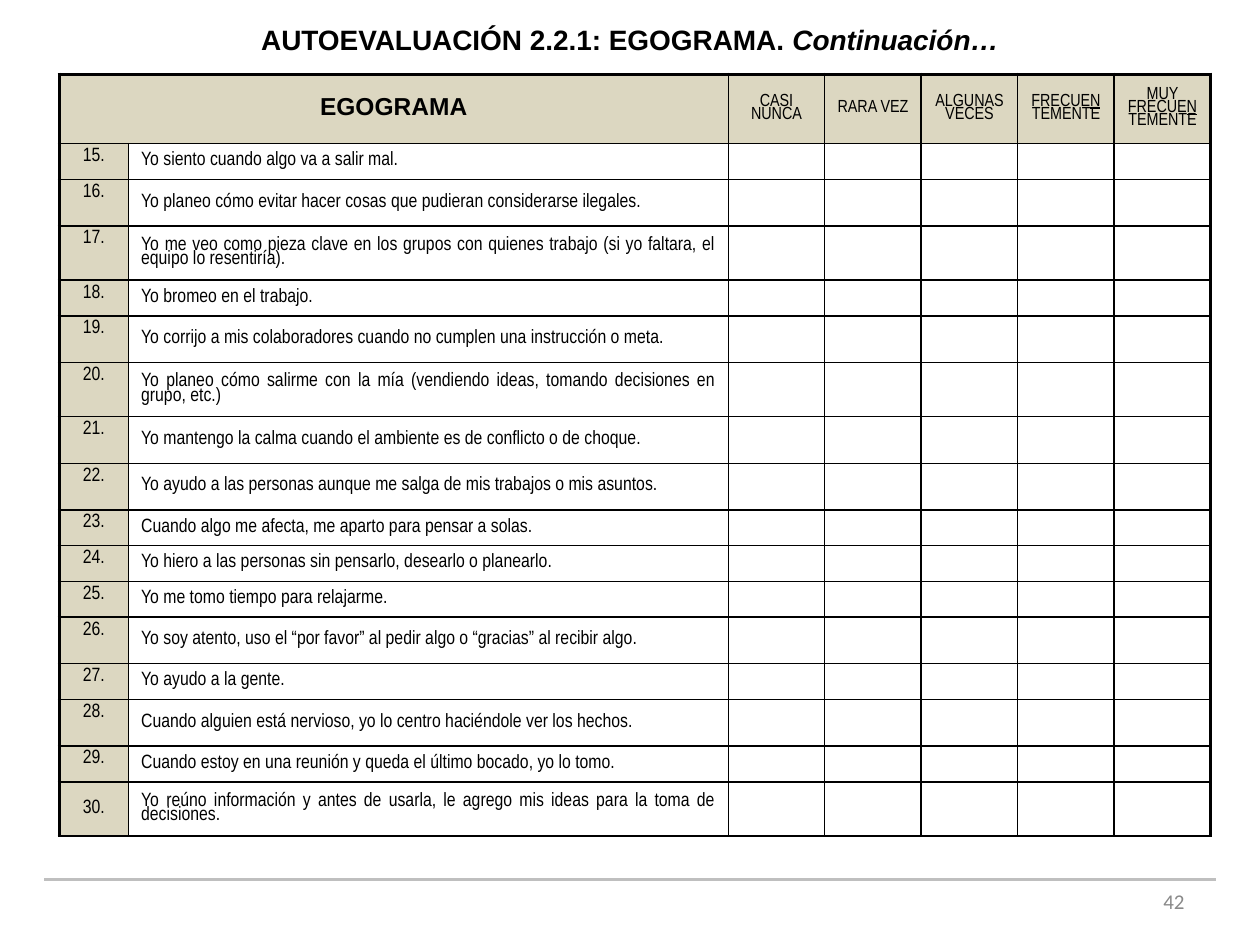
"""Build the second page of the egogram self-assessment questionnaire."""
from dataclasses import dataclass

from lxml import etree
from pptx import Presentation
from pptx.dml.color import RGBColor
from pptx.enum.shapes import MSO_CONNECTOR
from pptx.enum.text import MSO_ANCHOR, PP_ALIGN
from pptx.oxml.ns import qn
from pptx.util import Inches, Pt

CENTER, RIGHT, JUSTIFY = PP_ALIGN.CENTER, PP_ALIGN.RIGHT, PP_ALIGN.JUSTIFY
TOP, MIDDLE = MSO_ANCHOR.TOP, MSO_ANCHOR.MIDDLE
STRAIGHT = MSO_CONNECTOR.STRAIGHT

SHORT, MEDIUM, TALL = 0.28, 0.37, 0.43
HEADER_HEIGHT = 0.55
TABLE_WIDTH, NUMBER_WIDTH, STATEMENT_WIDTH = 9.14, 0.55, 4.76
FIRST_NUMBER = 15
ANSWERS = [
    [("CASI NUNCA", "")],
    [("RARA VEZ", "")],
    [("ALGUNAS VECES", "")],
    [("FRECUE", ""), ("N", "u"), ("TEMENTE", "")],
    [("MUY FRECUE", ""), ("N", "u"), ("TEMENTE", "")],
]
STATEMENTS = [
    (SHORT, "Yo siento cuando algo va a salir mal."),
    (MEDIUM, "Yo planeo cómo evitar hacer cosas que pudieran considerarse ilegales."),
    (TALL, "Yo me veo como pieza clave en los grupos con quienes trabajo "
           "(si yo faltara, el equipo lo resentiría)."),
    (SHORT, "Yo bromeo en el trabajo."),
    (MEDIUM, "Yo corrijo a mis colaboradores cuando no cumplen una instrucción o meta."),
    (TALL, "Yo planeo cómo salirme con la mía (vendiendo ideas, tomando decisiones "
           "en grupo, etc.)"),
    (MEDIUM, "Yo mantengo la calma cuando el ambiente es de conflicto o de choque."),
    (MEDIUM, "Yo ayudo a las personas aunque me salga de mis trabajos o mis asuntos."),
    (SHORT, "Cuando algo me afecta, me aparto para pensar a solas."),
    (SHORT, "Yo hiero a las personas sin pensarlo, desearlo o planearlo."),
    (SHORT, "Yo me tomo tiempo para relajarme."),
    (MEDIUM, "Yo soy atento, uso el “por favor” al pedir algo o “gracias” al recibir algo."),
    (SHORT, "Yo ayudo a la gente."),
    (MEDIUM, "Cuando alguien está nervioso, yo lo centro haciéndole ver los hechos."),
    (SHORT, "Cuando estoy en una reunión y queda el último bocado, yo lo tomo."),
    (TALL, "Yo reúno información y antes de usarla, le agrego mis ideas para la toma "
           "de decisiones."),
]


@dataclass(frozen=True)
class Theme:
    """Colours, fonts, type sizes and line widths."""
    ink: str = "000000"
    paper: str = "FFFFFF"
    sand: str = "DCD7C1"
    rule: str = "BFBFBF"
    muted: str = "898989"
    heading_font: str = "Arial"
    table_font: str = "Arial Narrow"
    number_font: str = "Calibri"
    title_size: float = 16
    heading_size: float = 14
    page_size: float = 12
    body_size: float = 11
    answer_size: float = 10
    thin: float = 1
    thick: float = 2.25
    rule_width: float = 2
    leading: float = 0.8


class SlideBuilder:
    """Draws styled elements on the current slide."""

    def __init__(self, slide, theme):
        """Keep the slide and its theme."""
        self.slide = slide
        self.theme = theme

    def add_runs(self, paragraph, runs, font, size, color, align):
        """Add runs, each a text with style letters b, i or u."""
        paragraph.alignment = align
        for text, style in runs:
            run = paragraph.add_run()
            run.text = text
            run.font.name, run.font.size = font, Pt(size)
            run.font.bold = "b" in style
            run.font.italic = "i" in style
            run.font.underline = "u" in style
            run.font.color.rgb = RGBColor.from_string(color)

    def text(self, box, runs, font, size, color, align, anchor=TOP):
        """Add a wrapping text box."""
        shape = self.slide.shapes.add_textbox(*map(Inches, box))
        frame = shape.text_frame
        frame.word_wrap, frame.vertical_anchor = True, anchor
        self.add_runs(frame.paragraphs[0], runs, font, size, color, align)

    def line(self, left, y, right):
        """Add a horizontal rule."""
        line = self.slide.shapes.add_connector(
            STRAIGHT, Inches(left), Inches(y), Inches(right), Inches(y))
        line.line.color.rgb = RGBColor.from_string(self.theme.rule)
        line.line.width = Pt(self.theme.rule_width)
        etree.SubElement(line._element.spPr, qn("a:effectLst"))

    def table(self, left, top, widths, heights):
        """Add a plain table with a heavy left, top and right edge."""
        theme = self.theme
        frame = self.slide.shapes.add_table(
            len(heights), len(widths), Inches(left), Inches(top),
            Inches(sum(widths)), Inches(sum(heights)))
        table = frame.table
        table.first_row = table.horz_banding = False
        for column, width in zip(table.columns, widths):
            column.width = Inches(width)
        for row, height in zip(table.rows, heights):
            row.height = Inches(height)
        last = len(widths) - 1
        for r in range(len(heights)):
            for c in range(len(widths)):
                cell = table.cell(r, c)
                heavy = {"L": c == 0, "R": c == last, "T": r == 0, "B": False}
                self.borders(cell, heavy)
                cell.fill.solid()
                shaded = r == 0 or c == 0
                cell.fill.fore_color.rgb = RGBColor.from_string(
                    theme.sand if shaded else theme.paper)
        return table

    def borders(self, cell, heavy):
        """Draw the four sides of a cell."""
        properties = cell._tc.get_or_add_tcPr()
        for side, is_heavy in heavy.items():
            width = Pt(self.theme.thick if is_heavy else self.theme.thin)
            border = etree.SubElement(properties, qn(f"a:ln{side}"), w=str(int(width)))
            fill = etree.SubElement(border, qn("a:solidFill"))
            etree.SubElement(fill, qn("a:srgbClr"), val=self.theme.ink)

    def cell(self, cell, runs, size, align=CENTER, anchor=MIDDLE, font=None):
        """Fill a table cell; an empty one only gets its type size."""
        theme = self.theme
        cell.vertical_anchor = anchor
        paragraph = cell.text_frame.paragraphs[0]
        paragraph.line_spacing = theme.leading
        self.add_runs(paragraph, runs, font or theme.table_font, size, theme.ink, align)
        if not runs:
            etree.SubElement(paragraph._p, qn("a:endParaRPr"), sz=str(size * 100))


def main():
    """Build and save the presentation."""
    presentation = Presentation()
    presentation.slide_width, presentation.slide_height = Inches(10), Inches(7.5)
    theme = Theme()
    builder = SlideBuilder(
        presentation.slides.add_slide(presentation.slide_layouts[6]), theme)

    builder.line(0.35, 6.98, 9.65)
    builder.text((7.17, 6.95, 2.33, 0.4), [("42", "")], theme.number_font,
                 theme.page_size, theme.muted, RIGHT, MIDDLE)

    answer_width = (TABLE_WIDTH - NUMBER_WIDTH - STATEMENT_WIDTH) / len(ANSWERS)
    widths = [NUMBER_WIDTH, STATEMENT_WIDTH] + [answer_width] * len(ANSWERS)
    heights = [HEADER_HEIGHT] + [height for height, _ in STATEMENTS]
    table = builder.table(0.47, 0.59, widths, heights)
    table.cell(0, 0).merge(table.cell(0, 1))
    builder.cell(table.cell(0, 0), [("EGOGRAMA", "b")], theme.heading_size,
                 font=theme.heading_font)
    for column, answer in enumerate(ANSWERS, 2):
        builder.cell(table.cell(0, column), answer, theme.answer_size)
    for row, (_, statement) in enumerate(STATEMENTS, 1):
        anchor = MIDDLE if row == len(STATEMENTS) else TOP
        number = f"{FIRST_NUMBER + row - 1}."
        builder.cell(table.cell(row, 0), [(number, "")], theme.body_size, anchor=anchor)
        builder.cell(table.cell(row, 1), [(statement, "")], theme.body_size, JUSTIFY)
        for column in range(2, len(widths)):
            builder.cell(table.cell(row, column), [], theme.body_size)

    builder.text((0.47, 0.13, 9.06, 0.37),
                 [("AUTOEVALUACIÓN 2.2.1: EGOGRAMA. ", "b"), ("Continuación…", "bi")],
                 theme.heading_font, theme.title_size, theme.ink, CENTER)
    presentation.save("out.pptx")


if __name__ == "__main__":
    main()
